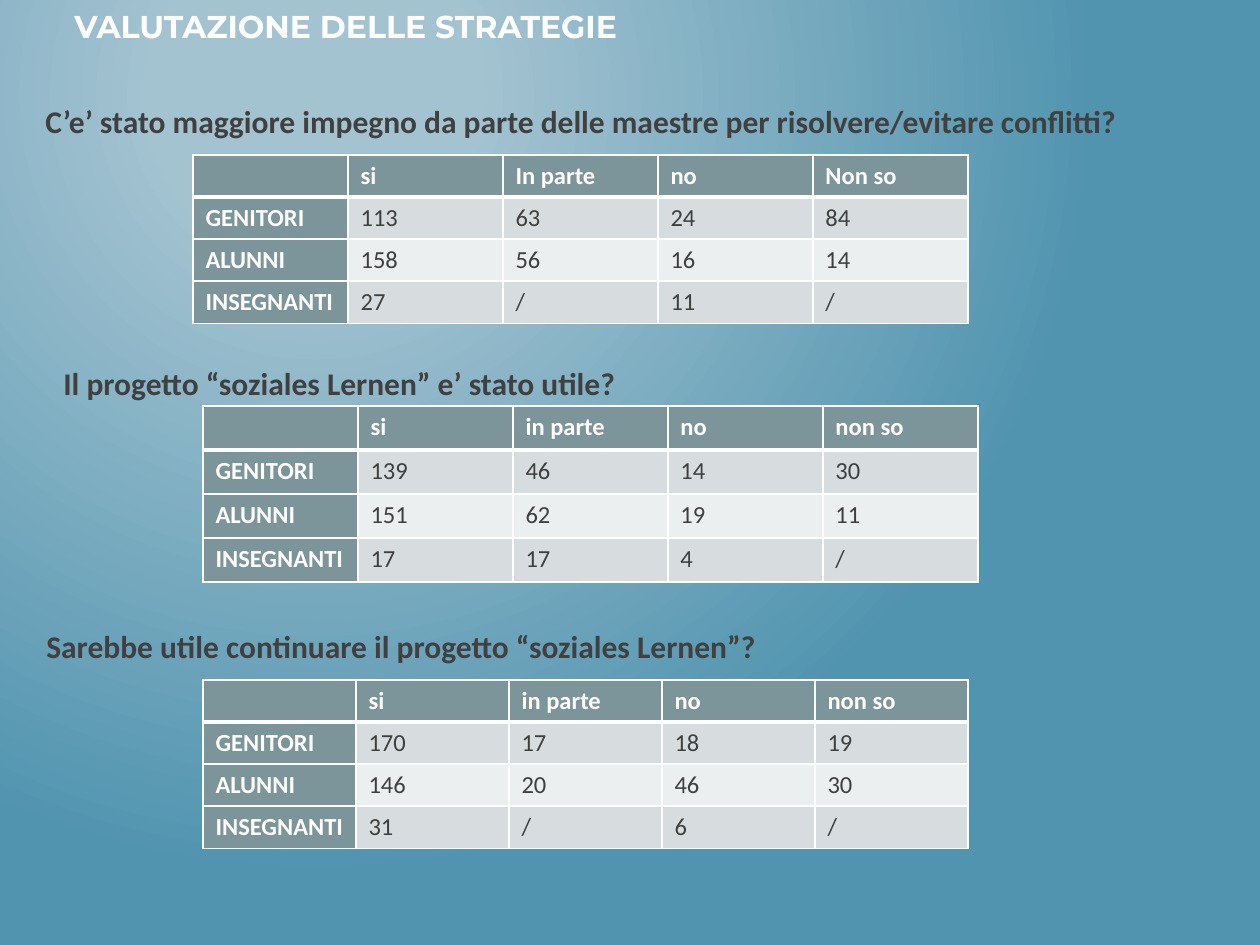
from dataclasses import dataclass

from lxml.etree import SubElement
from pptx import Presentation
from pptx.dml.color import RGBColor
from pptx.oxml import parse_xml
from pptx.oxml.ns import nsdecls, qn
from pptx.util import Emu, Pt

SCALE = 914400 / 126


def px(n):
    return Emu(round(n * SCALE))


@dataclass(frozen=True)
class Theme:
    glow: str = "A3C3D1"
    sea: str = "5194AF"
    white: str = "FFFFFF"
    ask: str = "404040"
    ink: str = "3F3F3F"
    head: str = "7C959A"
    bands: tuple = ("D7DDDE", "ECEFEF")
    title_font: str = "Montserrat"
    body_font: str = "Calibri"
    big: int = 18
    small: int = 14
    thin: int = 1
    thick: int = 3


class Deck:
    def __init__(self, theme):
        self.theme = theme
        self.prs = Presentation()
        self.prs.slide_width, self.prs.slide_height = px(1260), px(945)
        self.slide = self.prs.slides.add_slide(self.prs.slide_layouts[6])

    def backdrop(self):
        t = self.theme
        self.slide._element.cSld.insert(0, parse_xml(
            f'<p:bg {nsdecls("p", "a")}><p:bgPr><a:gradFill rotWithShape="1"><a:gsLst>'
            f'<a:gs pos="20000"><a:srgbClr val="{t.glow}"/></a:gs>'
            f'<a:gs pos="100000"><a:srgbClr val="{t.sea}"/></a:gs></a:gsLst>'
            '<a:path path="circle">'
            '<a:fillToRect l="50000" t="20000" r="100000" b="100000"/></a:path>'
            '</a:gradFill><a:effectLst/></p:bgPr></p:bg>'))

    def style(self, para, name, size, color, bold=True):
        font = para.font
        font.name, font.size, font.bold = name, Pt(size), bold
        font.color.rgb = RGBColor.from_string(color)

    def text(self, words, x, y, w, h, name, color, hang=0):
        frame = self.slide.shapes.add_textbox(px(x), px(y), px(w), px(h)).text_frame
        frame.word_wrap = True
        para = frame.paragraphs[0]
        para.text = words
        self.style(para, name, self.theme.big, color)
        if hang:
            props = para._p.get_or_add_pPr()
            props.set("marL", str(px(hang)))
            props.set("indent", str(-px(hang)))

    def border(self, cell, top, bottom):
        t = self.theme
        props = cell._tc.get_or_add_tcPr()
        for side, width in zip("LRTB", (t.thin, t.thin, top, bottom)):
            line = SubElement(props, qn(f"a:ln{side}"), w=str(Pt(width)))
            fill = SubElement(line, qn("a:solidFill"))
            SubElement(fill, qn("a:srgbClr"), val=t.white)

    def table(self, rows, x, y, wide, high):
        t = self.theme
        count = len(rows[0])
        grid = self.slide.shapes.add_table(
            len(rows), count, px(x), px(y), px(wide * count), px(high * len(rows))).table
        for col in grid.columns:
            col.width = px(wide)
        for r, row in enumerate(rows):
            grid.rows[r].height = px(high)
            for c, words in enumerate(row):
                cell = grid.cell(r, c)
                label = r == 0 or c == 0
                # The heavy rule runs between header and first row
                self.border(cell, t.thick if r == 1 else t.thin,
                            t.thick if r == 0 else t.thin)
                cell.fill.solid()
                cell.fill.fore_color.rgb = RGBColor.from_string(
                    t.head if label else t.bands[(r - 1) % 2])
                para = cell.text_frame.paragraphs[0]
                if words:
                    para.text = words
                else:
                    para._p.get_or_add_endParaRPr().set("sz", str(t.small * 100))
                self.style(para, t.body_font, t.small,
                           t.white if label else t.ink, label)


GROUPS = ("GENITORI", "ALUNNI", "INSEGNANTI")

# Question, its place, answers, counts per group, table x, y, column, row
POLLS = [
    ("C’e’ stato maggiore impegno da parte delle maestre per risolvere/evitare conflitti?",
     (33, 96), ("si", "In parte", "no", "Non so"),
     ("113 63 24 84", "158 56 16 14", "27 / 11 /"), (193, 155, 155, 42)),
    ("Il progetto “soziales Lernen” e’ stato utile?",
     (51, 358), ("si", "in parte", "no", "non so"),
     ("139 46 14 30", "151 62 19 11", "17 17 4 /"), (203, 406, 155, 44)),
    ("Sarebbe utile continuare il progetto “soziales Lernen”?",
     (34, 621), ("si", "in parte", "no", "non so"),
     ("170 17 18 19", "146 20 46 30", "31 / 6 /"), (203, 680, 153, 42)),
]


def main():
    theme = Theme()
    deck = Deck(theme)

    # Backdrop and title
    deck.backdrop()
    deck.text("VALUTAZIONE DELLE STRATEGIE", 62, 1, 1134, 113,
              theme.title_font, theme.white)

    # Questions with their tables
    for ask, spot, heads, counts, place in POLLS:
        deck.text(ask, *spot, 1145, 263, theme.body_font, theme.ask, hang=48)
        body = [(group, *line.split()) for group, line in zip(GROUPS, counts)]
        deck.table([("", *heads), *body], *place)

    deck.prs.save("out.pptx")


if __name__ == "__main__":
    main()
